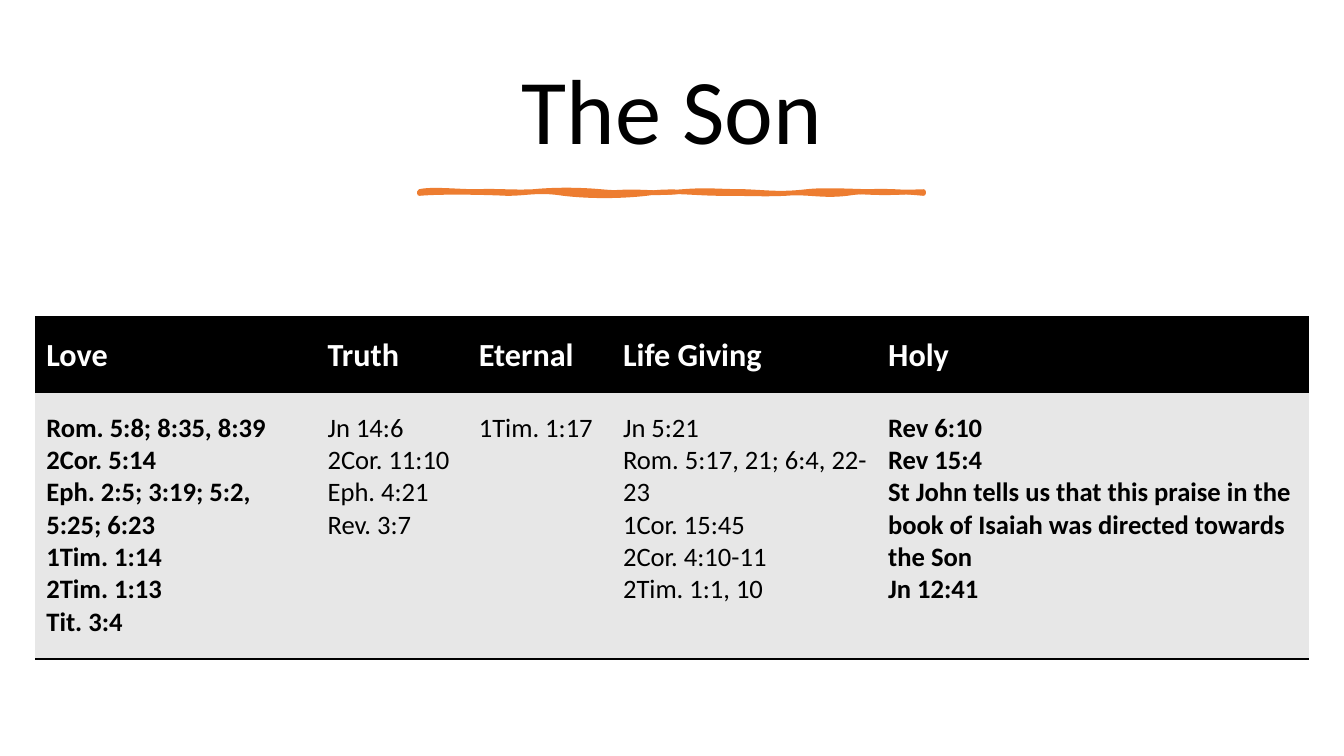
from dataclasses import dataclass

from lxml import etree
from pptx import Presentation
from pptx.dml.color import RGBColor
from pptx.enum.text import MSO_ANCHOR, PP_ALIGN
from pptx.oxml.ns import qn
from pptx.slide import Slide
from pptx.table import _Cell
from pptx.util import Pt

PX = 9144  # EMU; 100 px to the inch
FONT = "Calibri"
MIDDLE, TOP = MSO_ANCHOR.MIDDLE, MSO_ANCHOR.TOP
CENTER = PP_ALIGN.CENTER
PLAIN_TABLE = "{2D5ABB26-0587-4C30-8999-92F81FD0307C}"
COLORS = {"ink": "000000", "paper": "FFFFFF", "gray": "E7E7E7", "orange": "ED7D31"}

Point = tuple[int, int]
Curve = tuple[Point, Point, Point]


@dataclass
class Column:
    head: str
    width: int
    lines: list[str]
    bold: bool = False


@dataclass
class Look:
    """How the cells of one table row are drawn."""
    size: int
    color: str
    fill: str
    anchor: MSO_ANCHOR
    top: int
    edge: str


HEAD = Look(23, "paper", "ink", MIDDLE, 16, "a:lnT")
BODY = Look(19, "ink", "gray", TOP, 19, "a:lnB")
ROWS = [75, 264]

COLUMNS = [
    Column("Love", 279, [
        "Rom. 5:8; 8:35, 8:39", "2Cor. 5:14", "Eph. 2:5; 3:19; 5:2, 5:25; 6:23",
        "1Tim. 1:14", "2Tim. 1:13", "Tit. 3:4"], True),
    Column("Truth", 150, ["Jn 14:6", "2Cor. 11:10", "Eph. 4:21", "Rev. 3:7"]),
    Column("Eternal", 143, ["1Tim. 1:17"]),
    Column("Life Giving", 263, [
        "Jn 5:21", "Rom. 5:17, 21; 6:4, 22-23", "1Cor. 15:45",
        "2Cor. 4:10-11", "2Tim. 1:1, 10"]),
    Column("Holy", 428, [
        "Rev 6:10", "Rev 15:4",
        "St John tells us that this praise in the book of Isaiah "
        "was directed towards the Son", "Jn 12:41"], True),
]

# Brush stroke: each curve is two controls and an end.
START = (416, 190)
OUTLINE = [
    ((428, 187), (454, 190), (473, 190)),
    ((492, 189), (509, 191), (529, 190)),
    ((549, 188), (574, 188), (596, 190)),
    ((617, 192), (653, 192), (677, 190)),
    ((702, 188), (714, 190), (739, 190)),
    ((763, 191), (774, 193), (800, 190)),
    ((826, 187), (867, 192), (916, 190)),
    ((917, 191), (916, 191), (916, 192)),
    ((895, 190), (865, 188), (840, 192)),
    ((815, 195), (801, 190), (779, 192)),
    ((756, 193), (747, 192), (717, 192)),
    ((687, 192), (667, 188), (641, 192)),
    ((614, 195), (585, 195), (559, 192)),
    ((534, 188), (523, 192), (503, 192)),
    ((483, 191), (438, 190), (416, 192)),
    ((416, 191), (416, 190), START),
]
INSIDE = [
    ((432, 189), (452, 188), (478, 190)),
    ((503, 191), (508, 192), (534, 190)),
    ((560, 188), (574, 192), (596, 190)),
    ((618, 187), (639, 188), (667, 190)),
    ((695, 191), (724, 187), (744, 190)),
    ((763, 192), (802, 188), (825, 190)),
    ((848, 191), (872, 193), (916, 190)),
    ((916, 190), (916, 191), (916, 192)),
    ((879, 194), (876, 194), (840, 192)),
    ((804, 189), (796, 191), (759, 192)),
    ((721, 192), (716, 188), (677, 192)),
    ((639, 196), (637, 190), (621, 192)),
    ((604, 193), (572, 193), (544, 192)),
    ((517, 190), (504, 191), (478, 192)),
    ((452, 192), (441, 189), (416, 192)),
    ((416, 191), (416, 190), START),
]


def rgb(name: str) -> RGBColor:
    return RGBColor.from_string(COLORS[name])


def write(frame, lines: list[str], size: int, color: str, bold: bool = False) -> None:
    frame.text = "\n".join(lines)
    for para in frame.paragraphs:
        font = para.font
        font.name, font.size, font.bold = FONT, Pt(size), bold
        font.color.rgb = rgb(color)


def add_title(slide: Slide) -> None:
    box = slide.shapes.add_textbox(70 * PX, 45 * PX, 1193 * PX, 137 * PX)
    frame = box.text_frame
    frame.word_wrap = True
    frame.vertical_anchor = MIDDLE
    write(frame, ["The Son"], 66, "ink")
    para = frame.paragraphs[0]
    para.alignment = CENTER
    para.line_spacing = 0.9


def add_path(paths, size: dict[str, str], flag: str, curves: list[Curve]) -> None:
    """Add one closed path of cubic curves, measured from START."""
    path = etree.SubElement(paths, qn("a:path"), size)
    path.set(*flag.split("="))
    moves = [("a:moveTo", [START])] + [("a:cubicBezTo", c) for c in curves]
    for tag, points in moves:
        move = etree.SubElement(path, qn(tag))
        for x, y in points:
            etree.SubElement(move, qn("a:pt"), x=str(x - START[0]), y=str(y - START[1]))
    etree.SubElement(path, qn("a:close"))


def add_stroke(slide: Slide) -> None:
    pen = slide.shapes.build_freeform(*START, scale=PX)
    pen.add_line_segments([curve[-1] for curve in OUTLINE])
    shape = pen.convert_to_shape()
    shape.shadow.inherit = False
    shape.fill.solid()
    shape.fill.fore_color.rgb = rgb("orange")
    shape.line.color.rgb = rgb("orange")
    shape.line.width = Pt(3.25)
    props = shape.element.spPr
    etree.SubElement(props.find(qn("a:ln")), qn("a:round"))
    paths = props.find(qn("a:custGeom")).find(qn("a:pathLst"))
    size = dict(paths[0].attrib)
    paths.remove(paths[0])
    add_path(paths, size, "fill=none", OUTLINE)
    add_path(paths, size, "stroke=0", INSIDE)


def add_edge(cell: _Cell, tag: str) -> None:
    line = etree.Element(qn(tag), w=str(Pt(2)))
    fill = etree.SubElement(line, qn("a:solidFill"))
    etree.SubElement(fill, qn("a:srgbClr"), val=COLORS["ink"])
    cell._tc.get_or_add_tcPr().insert(0, line)


def fill_cell(cell: _Cell, lines: list[str], look: Look, bold: bool) -> None:
    write(cell.text_frame, lines, look.size, look.color, bold)
    cell.vertical_anchor = look.anchor
    cell.margin_left, cell.margin_right = 11 * PX, 8 * PX
    cell.margin_top, cell.margin_bottom = look.top * PX, 16 * PX
    cell.fill.solid()
    cell.fill.fore_color.rgb = rgb(look.fill)
    add_edge(cell, look.edge)


def add_verses(slide: Slide) -> None:
    width = sum(col.width for col in COLUMNS)
    frame = slide.shapes.add_table(
        len(ROWS), len(COLUMNS), 35 * PX, 315 * PX, width * PX, sum(ROWS) * PX)
    table = frame.table
    table.first_row = table.horz_banding = False
    table._tbl.tblPr.find(qn("a:tableStyleId")).text = PLAIN_TABLE
    for row, height in zip(table.rows, ROWS):
        row.height = height * PX
    for i, col in enumerate(COLUMNS):
        table.columns[i].width = col.width * PX
        fill_cell(table.cell(0, i), [col.head], HEAD, True)
        fill_cell(table.cell(1, i), col.lines, BODY, col.bold)


def main() -> None:
    deck = Presentation()
    deck.slide_width, deck.slide_height = 1333 * PX, 750 * PX
    slide = deck.slides.add_slide(deck.slide_layouts[6])
    add_title(slide)
    add_stroke(slide)
    add_verses(slide)
    deck.save("out.pptx")


if __name__ == "__main__":
    main()
